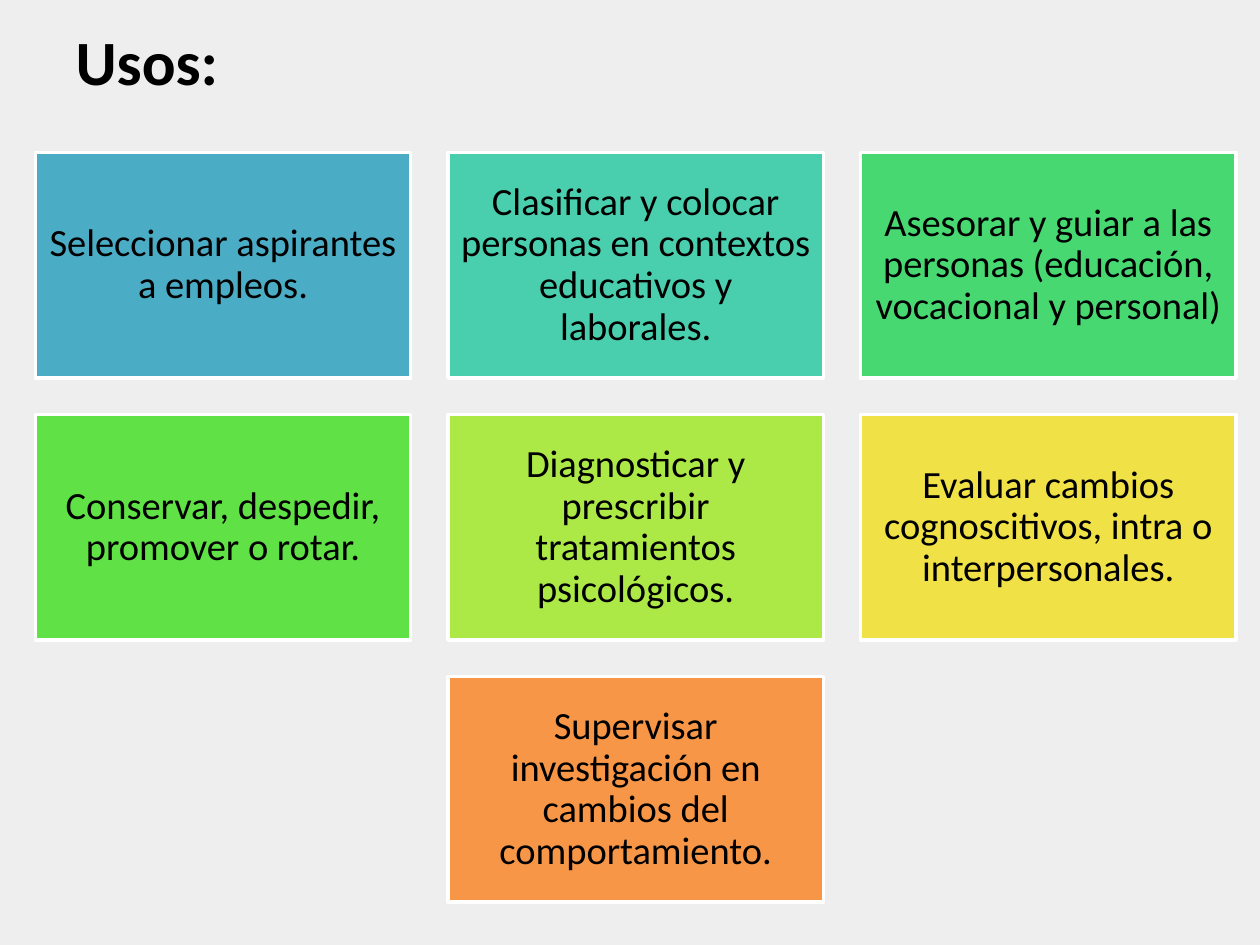
from pptx import Presentation
from pptx.dml.color import RGBColor
from pptx.enum.shapes import MSO_SHAPE
from pptx.enum.text import MSO_ANCHOR, PP_ALIGN
from pptx.util import Inches, Pt

RECTANGLE = MSO_SHAPE.RECTANGLE
MIDDLE, BOTTOM = MSO_ANCHOR.MIDDLE, MSO_ANCHOR.BOTTOM
CENTER, LEFT = PP_ALIGN.CENTER, PP_ALIGN.LEFT

TITLE_FONT = {"name": "Calibri", "size": Pt(36), "bold": True}
USE_FONT = {"name": "Calibri", "size": Pt(22), "bold": False}
MARGIN = Inches(0.09)
USE_FRAME = {
    "word_wrap": True,
    "vertical_anchor": MIDDLE,
    "margin_left": MARGIN,
    "margin_right": MARGIN,
    "margin_top": MARGIN,
    "margin_bottom": MARGIN,
}

GRID_LEFT, GRID_TOP = 0.28, 1.21
CARD_WIDTH, CARD_HEIGHT = 2.98, 1.79
COLUMN_STEP, ROW_STEP = 3.275, 2.08
COLUMNS = 3

USES = [
    ("Seleccionar aspirantes a empleos.", "4BACC6"),
    ("Clasificar y colocar personas en contextos educativos y laborales.", "49CFAE"),
    ("Asesorar y guiar a las personas (educación, vocacional y personal)", "47D872"),
    ("Conservar, despedir, promover o rotar.", "60E146"),
    ("Diagnosticar y prescribir tratamientos psicológicos.", "ACE946"),
    ("Evaluar cambios cognoscitivos, intra o interpersonales.", "F0E146"),
    ("Supervisar investigación en cambios del comportamiento.", "F79646"),
]


def paint(color_format, color):
    """Set a solid colour on a fill or a font colour."""
    if hasattr(color_format, "solid"):
        color_format.solid()
        color_format = color_format.fore_color
    color_format.rgb = RGBColor.from_string(color)


def apply_format(target, values):
    """Set each attribute of the target from a dict."""
    for name, value in values.items():
        setattr(target, name, value)


def write(frame, text, font_values, alignment):
    """Write one black paragraph in a text frame and return it."""
    frame.text = text
    paragraph = frame.paragraphs[0]
    paragraph.alignment = alignment
    font = paragraph.runs[0].font
    apply_format(font, font_values)
    paint(font.color, "000000")
    return paragraph


def add_title(slide, text):
    """Place and format the slide title."""
    title = slide.shapes.title
    apply_format(title, {"left": Inches(0.5), "top": Inches(-0.42),
                         "width": Inches(9), "height": Inches(1.25)})
    title.text_frame.vertical_anchor = BOTTOM
    write(title.text_frame, text, TITLE_FONT, LEFT)


def add_use(slide, left, top, text, color):
    """Add one coloured card with a use."""
    card = slide.shapes.add_shape(RECTANGLE, Inches(left), Inches(top),
                                  Inches(CARD_WIDTH), Inches(CARD_HEIGHT))
    card.shadow.inherit = False
    paint(card.fill, color)
    paint(card.line.fill, "FFFFFF")
    card.line.width = Pt(2)
    apply_format(card.text_frame, USE_FRAME)
    write(card.text_frame, text, USE_FONT, CENTER).line_spacing = 0.9


def add_uses(slide):
    """Lay out the uses in rows, centring an incomplete last row."""
    for index, (text, color) in enumerate(USES):
        row, column = divmod(index, COLUMNS)
        row_count = min(COLUMNS, len(USES) - row * COLUMNS)
        column += (COLUMNS - row_count) / 2
        add_use(slide, GRID_LEFT + column * COLUMN_STEP,
                GRID_TOP + row * ROW_STEP, text, color)


def main():
    """Build and save the slide."""
    presentation = Presentation()
    presentation.slide_width = Inches(10)
    presentation.slide_height = Inches(7.5)
    slide = presentation.slides.add_slide(presentation.slide_layouts[5])
    paint(slide.background.fill, "EEEEEE")
    add_uses(slide)
    add_title(slide, "Usos:")
    presentation.save("out.pptx")


if __name__ == "__main__":
    main()
